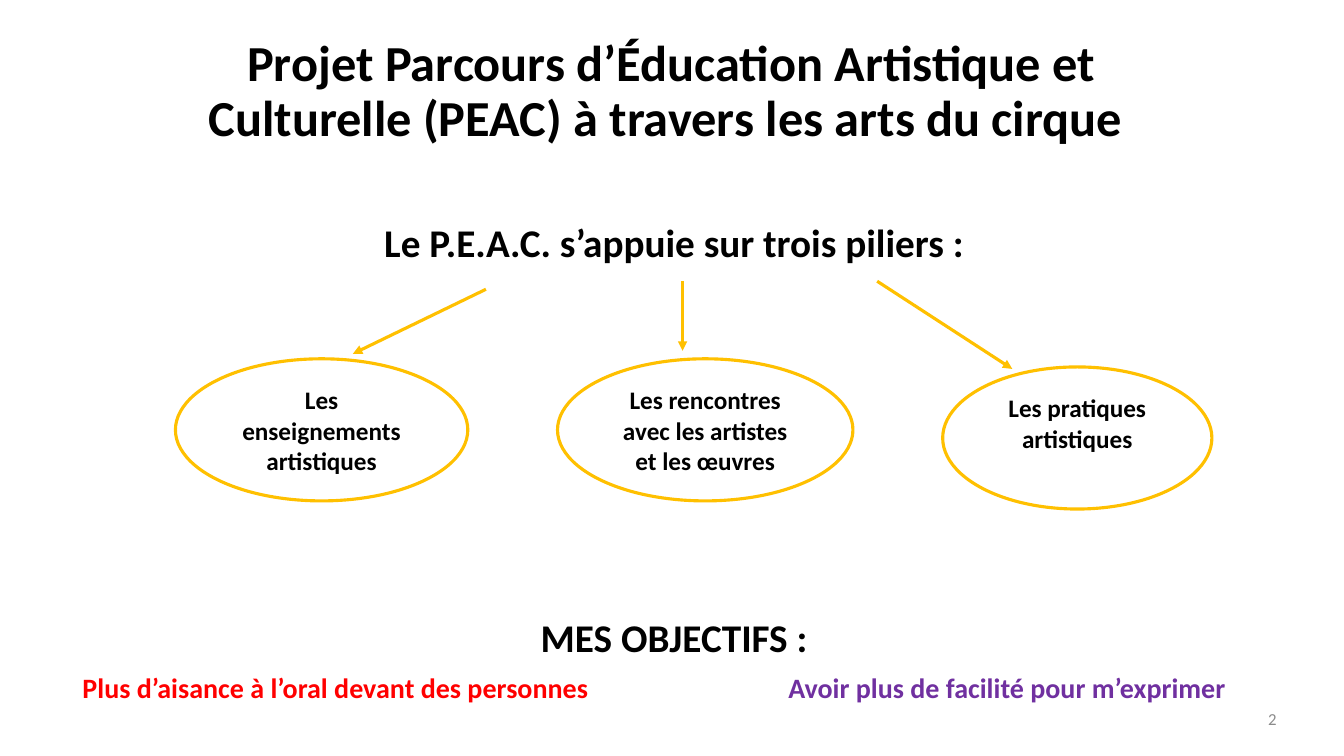
from dataclasses import dataclass

from lxml.etree import SubElement
from pptx import Presentation
from pptx.dml.color import RGBColor
from pptx.enum.shapes import MSO_CONNECTOR, MSO_SHAPE
from pptx.enum.text import MSO_ANCHOR, PP_ALIGN
from pptx.oxml.ns import qn
from pptx.slide import Slide
from pptx.text.text import TextFrame
from pptx.util import Inches, Pt

COLORS = {
    "black": "000000",
    "white": "FFFFFF",
    "gold": "FFC000",
    "red": "FF0000",
    "purple": "7030A0",
    "gray": "8B8B8B",
}
FONT = "Calibri"
LINE_WIDTH = Pt(2.25)
PILLAR_HEIGHT = 1.41


@dataclass
class Label:
    text: str
    left: float
    top: float
    width: float
    height: float
    size: int
    color: str = "black"
    align: PP_ALIGN = PP_ALIGN.CENTER
    anchor: MSO_ANCHOR = MSO_ANCHOR.MIDDLE
    bold: bool = True


@dataclass
class Pillar:
    text: str
    left: float
    top: float
    width: float
    arrow_start: tuple[float, float]
    arrow_end: tuple[float, float]


LABELS = [
    Label("Projet Parcours d’Éducation Artistique et Culturelle (PEAC) à travers les arts du cirque ",
          1.66, 0.23, 10, 1.28, 36, anchor=MSO_ANCHOR.BOTTOM),
    Label("Le P.E.A.C. s’appuie sur trois piliers\u00a0:", 0.72, 2.18, 11.93, 0.5, 28),
    Label("MES OBJECTIFS\u00a0:", 0.72, 6.1, 11.93, 0.5, 28),
    Label("Plus d’aisance à l’oral devant des personnes",
          0.72, 6.64, 5.6, 0.4, 20, "red", PP_ALIGN.LEFT),
    Label("Avoir plus de facilité pour m’exprimer",
          7.72, 6.64, 4.93, 0.4, 20, "purple", PP_ALIGN.LEFT),
    Label("2", 8.26, 6.94, 4.5, 0.4, 12, "gray", PP_ALIGN.RIGHT, bold=False),
]

PILLARS = [
    Pillar("Les enseignements artistiques", 1.74, 3.56, 2.9, (4.82, 2.87), (3.5, 3.51)),
    Pillar("Les rencontres avec les artistes et les œuvres", 5.53, 3.56, 2.93,
           (6.77, 2.79), (6.77, 3.48)),
    Pillar("Les pratiques artistiques", 9.35, 3.64, 2.67, (8.7, 2.79), (10.04, 3.66)),
]


def rgb(name: str) -> RGBColor:
    return RGBColor.from_string(COLORS[name])


def write_text(frame: TextFrame, text: str, size: int, color: str, align: PP_ALIGN,
               anchor: MSO_ANCHOR, bold: bool, line_spacing: float) -> None:
    frame.word_wrap = True
    frame.vertical_anchor = anchor
    paragraph = frame.paragraphs[0]
    paragraph.text = text
    paragraph.alignment = align
    paragraph.line_spacing = line_spacing
    paragraph.font.name = FONT
    paragraph.font.size = Pt(size)
    paragraph.font.bold = bold
    paragraph.font.color.rgb = rgb(color)


def add_label(slide: Slide, label: Label) -> None:
    shape = slide.shapes.add_textbox(Inches(label.left), Inches(label.top),
                                     Inches(label.width), Inches(label.height))
    write_text(shape.text_frame, label.text, label.size, label.color, label.align,
               label.anchor, label.bold, 0.9)


def add_pillar(slide: Slide, pillar: Pillar) -> None:
    shape = slide.shapes.add_shape(MSO_SHAPE.OVAL, Inches(pillar.left), Inches(pillar.top),
                                   Inches(pillar.width), Inches(PILLAR_HEIGHT))
    shape.shadow.inherit = False
    shape.fill.solid()
    shape.fill.fore_color.rgb = rgb("white")
    shape.line.color.rgb = rgb("gold")
    shape.line.width = LINE_WIDTH
    write_text(shape.text_frame, pillar.text, 18, "black", PP_ALIGN.CENTER,
               MSO_ANCHOR.TOP, True, 1.0)


def add_arrow(slide: Slide, start: tuple[float, float], end: tuple[float, float]) -> None:
    points = [Inches(value) for value in (*start, *end)]
    connector = slide.shapes.add_connector(MSO_CONNECTOR.STRAIGHT, *points)
    connector.line.color.rgb = rgb("gold")
    connector.line.width = LINE_WIDTH
    SubElement(connector.line._get_or_add_ln(), qn("a:tailEnd"), type="triangle")
    SubElement(connector._element.spPr, qn("a:effectLst"))


def main() -> None:
    presentation = Presentation()
    presentation.slide_width = Inches(13.33)
    presentation.slide_height = Inches(7.5)
    slide = presentation.slides.add_slide(presentation.slide_layouts[6])

    # Title, headings, objectives and page number
    for label in LABELS:
        add_label(slide, label)

    # Three pillars, each with its arrow
    for pillar in PILLARS:
        add_pillar(slide, pillar)
        add_arrow(slide, pillar.arrow_start, pillar.arrow_end)

    presentation.save("out.pptx")


if __name__ == "__main__":
    main()
